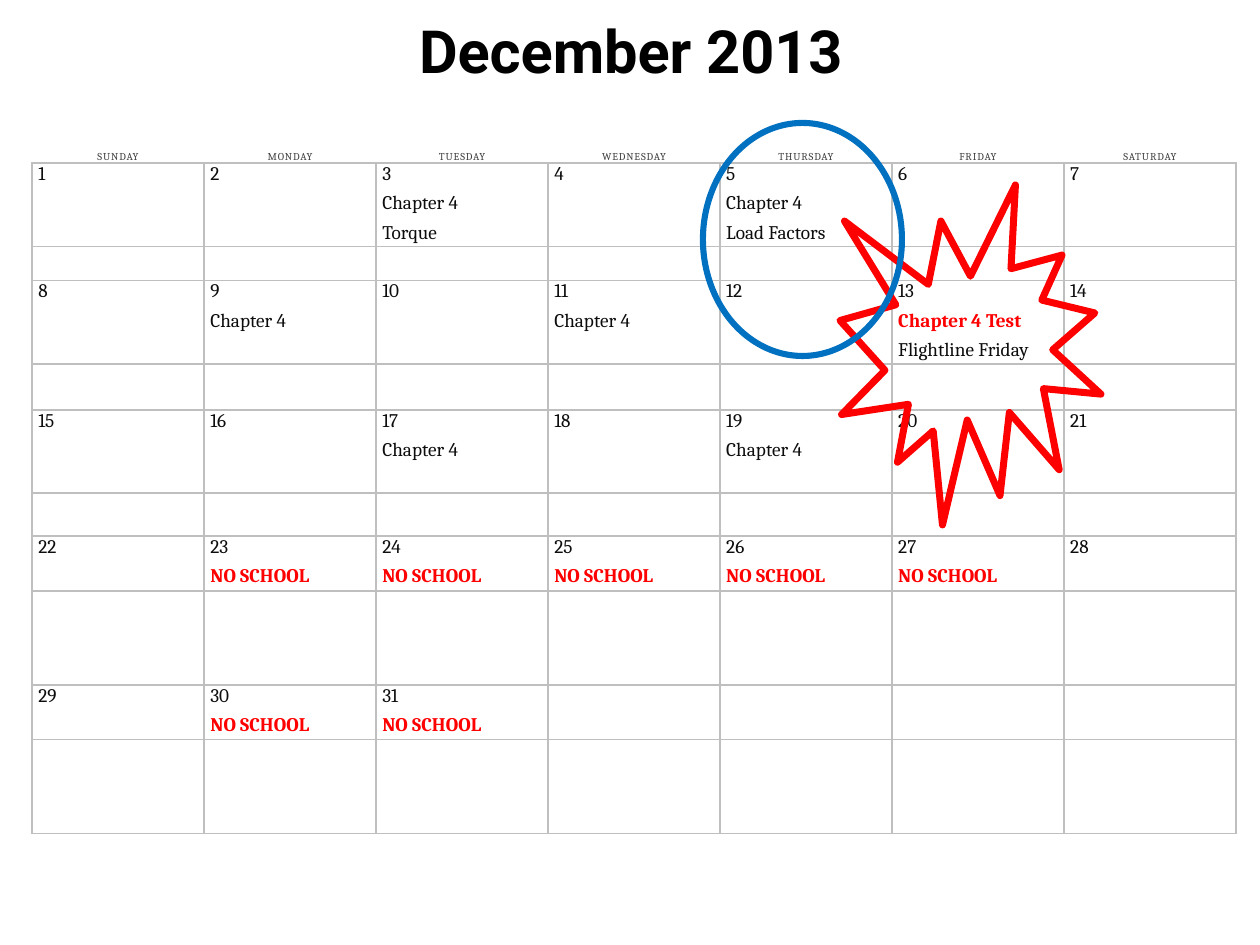
from typing import NamedTuple

from lxml import etree
from pptx import Presentation
from pptx import util as u
from pptx.dml.color import RGBColor
from pptx.enum import shapes, text
from pptx.oxml.ns import qn

PX = 914400 // 126
INK, GREY, RED, BLUE, LINE = "0D0D0D", "404040", "FF0000", "0070C0", "BFBFBF"
SERIF = "Cambria"
PLAIN_STYLE = "{2D5ABB26-0587-4C30-8999-92F81FD0307C}"

DAYS = ["SUNDAY", "MONDAY", "TUESDAY", "WEDNESDAY", "THURSDAY", "FRIDAY", "SATURDAY"]
EVENTS = {
    3: ["Chapter 4", "Torque"],
    5: ["Chapter 4", "Load Factors"],
    13: ["Chapter 4 Test", "Flightline Friday"],
    **{day: ["Chapter 4"] for day in (9, 11, 17, 19)},
    **{day: ["NO SCHOOL"] for day in (23, 24, 25, 26, 27, 30, 31)},
}
ALERTS = {"Chapter 4 Test", "NO SCHOOL"}
LAST_DAY = 31
COL_WIDTH = 172
ROW_HEIGHTS = [37, 83, 34, 81, 46, 83, 43, 55, 94, 55, 94]


class Mark(NamedTuple):
    kind: shapes.MSO_SHAPE
    left: int
    top: int
    width: int
    height: int
    color: str
    weight: float


MARKS = [
    Mark(shapes.MSO_SHAPE.EXPLOSION1, 840, 185, 261, 340, RED, 4),
    Mark(shapes.MSO_SHAPE.OVAL, 703, 123, 199, 233, BLUE, 3.5),
]


def px(n: int) -> u.Emu:
    return u.Emu(n * PX)


def rgb(color: str) -> RGBColor:
    return RGBColor.from_string(color)


def style_font(font, name: str, size: float, color: str, bold: bool = False) -> None:
    font.name, font.size, font.bold = name, u.Pt(size), bold
    font.color.rgb = rgb(color)


def add_borders(cell, sides: str) -> None:
    tcPr = cell._tc.get_or_add_tcPr()
    for side in sides:
        ln = etree.SubElement(tcPr, qn(f"a:ln{side}"), w=str(u.Pt(1)))
        fill = etree.SubElement(ln, qn("a:solidFill"))
        etree.SubElement(fill, qn("a:srgbClr"), val=LINE)


def fill_cell(cell, lines: list[str], sides: str, header: bool = False) -> None:
    add_borders(cell, sides)
    cell.fill.background()
    cell.margin_left = cell.margin_right = u.Inches(0.05)
    cell.margin_top = cell.margin_bottom = 0
    if header:
        cell.vertical_anchor = text.MSO_ANCHOR.BOTTOM
    tf = cell.text_frame
    tf.text = "\n".join(lines)
    for i, p in enumerate(tf.paragraphs):
        p.space_before, p.space_after = u.Pt(2 if i else 0), u.Pt(2)
        if header:
            p.alignment = text.PP_ALIGN.CENTER
        for r in p.runs:
            alert = r.text in ALERTS
            color = GREY if header else RED if alert else INK
            style_font(r.font, SERIF, 6 if header else 11, color, alert)
            if header:
                r.font._element.set("spc", "50")
        if not p.runs:
            p._p.get_or_add_endParaRPr().set("sz", "1100")


def add_calendar(s) -> None:
    """Each week takes two rows: dates with events, then an empty row that closes it."""
    n_rows, n_cols = len(ROW_HEIGHTS), len(DAYS)
    frame = s.shapes.add_table(n_rows, n_cols, px(32), px(126),
                               px(COL_WIDTH * n_cols), px(sum(ROW_HEIGHTS)))
    table = frame.table
    table.first_row = table.horz_banding = False
    table._tbl.tblPr.find(qn("a:tableStyleId")).text = PLAIN_STYLE
    for column in table.columns:
        column.width = px(COL_WIDTH)
    for row, height in zip(table.rows, ROW_HEIGHTS):
        row.height = px(height)

    for col, name in enumerate(DAYS):
        fill_cell(table.cell(0, col), [name], "B", header=True)
        for week in range(n_rows // 2):
            day = week * n_cols + col + 1
            lines = [str(day), *EVENTS.get(day, [])] if day <= LAST_DAY else []
            fill_cell(table.cell(2 * week + 1, col), lines, "LRT")
            fill_cell(table.cell(2 * week + 2, col), [], "LRB")


def add_title(s) -> None:
    sp = s.shapes.title
    sp.left, sp.top, sp.width, sp.height = px(403), px(8), px(456), px(81)
    tf = sp.text_frame
    tf.text = "December 2013"
    tf.word_wrap = False
    tf.auto_size = text.MSO_AUTO_SIZE.SHAPE_TO_FIT_TEXT
    tf.vertical_anchor = text.MSO_ANCHOR.TOP
    p = tf.paragraphs[0]
    p.alignment = text.PP_ALIGN.CENTER
    style_font(p.runs[0].font, "Roboto", 34, "000000", True)


def add_mark(s, mark: Mark) -> None:
    sp = s.shapes.add_shape(mark.kind, px(mark.left), px(mark.top),
                            px(mark.width), px(mark.height))
    sp.shadow.inherit = False
    sp.fill.background()
    sp.line.color.rgb = rgb(mark.color)
    sp.line.width = u.Pt(mark.weight)


def main() -> None:
    prs = Presentation()
    prs.slide_width, prs.slide_height = u.Inches(10), u.Inches(7.5)
    s = prs.slides.add_slide(prs.slide_layouts[5])
    add_calendar(s)
    add_title(s)
    for mark in MARKS:
        add_mark(s, mark)
    prs.save("out.pptx")


if __name__ == "__main__":
    main()
